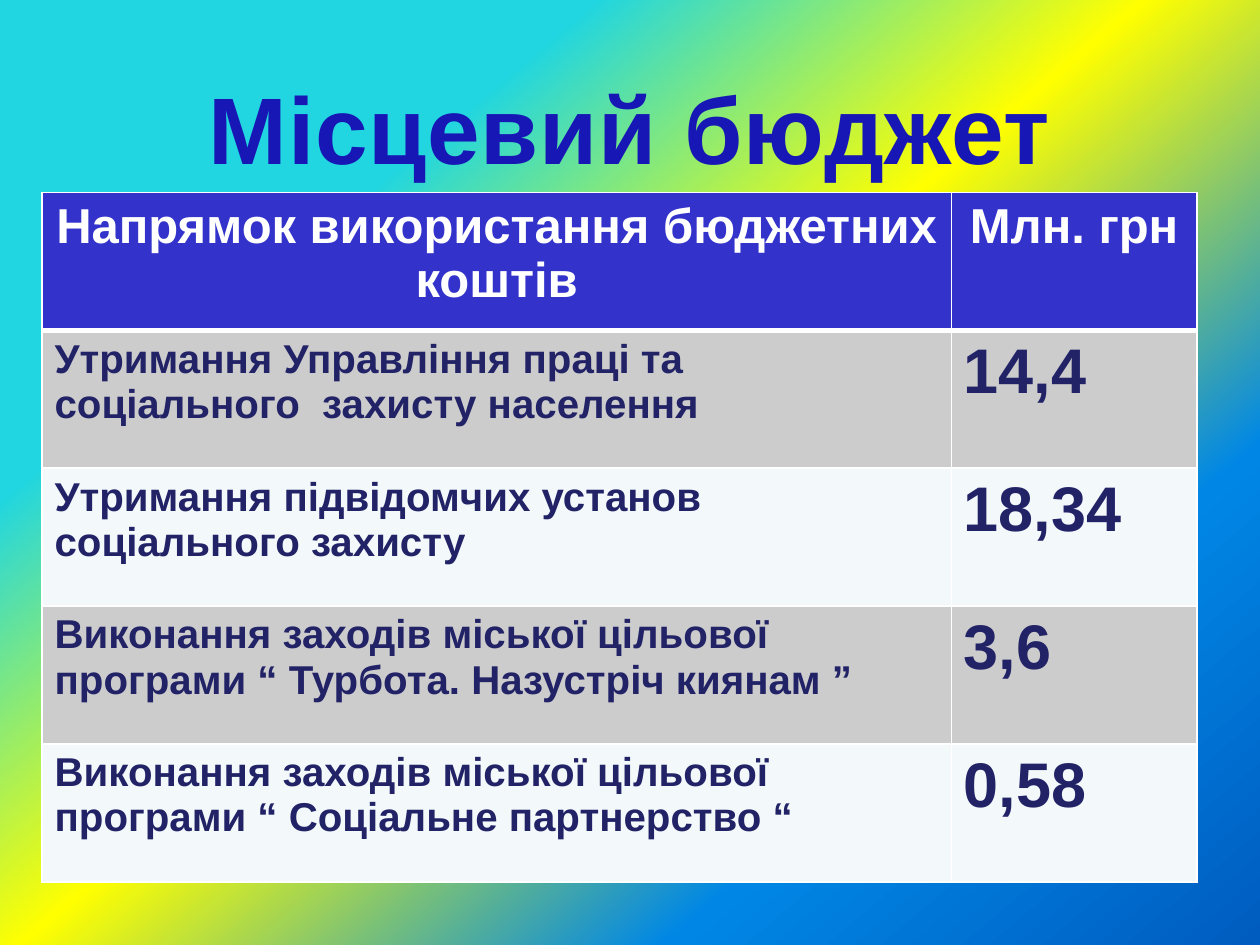
from dataclasses import dataclass

from lxml.etree import SubElement
from pptx import Presentation
from pptx.dml.color import RGBColor
from pptx.enum.text import MSO_ANCHOR, PP_ALIGN
from pptx.oxml.ns import qn
from pptx.util import Pt

NAVY, WHITE = "222267", "FFFFFF"


@dataclass
class Row:
    use: str
    sum: str
    fill: str


ROWS = [
    Row("Утримання Управління праці та соціального  захисту населення", "14,4", "CCCCCC"),
    Row("Утримання підвідомчих установ соціального захисту", "18,34", "F3F9FA"),
    Row("Виконання заходів міської цільової програми “ Турбота. Назустріч киянам ”", "3,6", "CCCCCC"),
    Row("Виконання заходів міської цільової програми “ Соціальне партнерство “", "0,58", "F3F9FA"),
]
STOPS = [(25, "21D6E0"), (48, "FFFF00"), (75, "0087E6"), (100, "005CBF")]


def color(code: str) -> RGBColor:
    return RGBColor.from_string(code)


def write(frame, text: str, *, size: float, tint: str, align=PP_ALIGN.LEFT, gap: float = 0) -> None:
    para = frame.paragraphs[0]
    para.alignment = align
    run = para.add_run()
    run.text = text
    font = run.font
    font.name, font.size, font.bold = "Arial", Pt(size), True
    font.color.rgb = color(tint)
    if gap:
        run._r.get_or_add_rPr().set("spc", str(int(gap * 100)))


def paint(slide, stops: list, angle: int) -> None:
    fill = slide.background.fill
    fill.gradient()
    grad = slide._element.find(".//" + qn("a:gradFill"))
    for part in list(grad):
        grad.remove(part)
    group = SubElement(grad, qn("a:gsLst"))
    for spot, code in stops:
        stop = SubElement(group, qn("a:gs"), pos=str(spot * 1000))
        SubElement(stop, qn("a:srgbClr"), val=code)
    SubElement(grad, qn("a:lin"), ang=str(angle * 60000), scaled="0")


def edge(cell, side: str, width: float) -> None:
    line = SubElement(cell._tc.get_or_add_tcPr(), qn("a:" + side), w=str(Pt(width)))
    fill = SubElement(line, qn("a:solidFill"))
    SubElement(fill, qn("a:srgbClr"), val=WHITE)


def draw(cell, text: str, fill: str, *, top: float = 1, base: float = 1, **look) -> None:
    # Borders come before the fill in the cell properties
    for side, width in (("lnL", 1), ("lnR", 1), ("lnT", top), ("lnB", base)):
        edge(cell, side, width)
    cell.fill.solid()
    cell.fill.fore_color.rgb = color(fill)
    write(cell.text_frame, text, **look)


def main() -> None:
    deck = Presentation()
    deck.slide_width, deck.slide_height = Pt(720), Pt(540)
    slide = deck.slides.add_slide(deck.slide_layouts[5])
    paint(slide, STOPS, 50)

    # Title
    title = slide.shapes.title
    title.left, title.top, title.width, title.height = Pt(36), Pt(36), Pt(648), Pt(72.5)
    title.text_frame.vertical_anchor = MSO_ANCHOR.BOTTOM
    write(title.text_frame, "Місцевий бюджет", size=54, tint="1717B5",
          align=PP_ALIGN.CENTER, gap=0.5)

    # Budget table
    high = 78.8
    count = len(ROWS) + 1
    table = slide.shapes.add_table(count, 2, Pt(24), Pt(110), Pt(660), Pt(high * count)).table
    table.horz_banding = False
    for col, width in zip(table.columns, (519.6, 140.4)):
        col.width = Pt(width)
    for row in table.rows:
        row.height = Pt(high)

    # Header row
    for col, text in enumerate(("Напрямок використання бюджетних коштів", "Млн. грн")):
        draw(table.cell(0, col), text, "3333CC", base=3, size=28, tint=WHITE,
             align=PP_ALIGN.CENTER)

    # Spending rows
    for num, row in enumerate(ROWS, 1):
        top = 3 if num == 1 else 1
        draw(table.cell(num, 0), row.use, row.fill, top=top, size=23, tint=NAVY)
        draw(table.cell(num, 1), row.sum, row.fill, top=top, size=36, tint=NAVY)

    deck.save("out.pptx")


if __name__ == "__main__":
    main()
